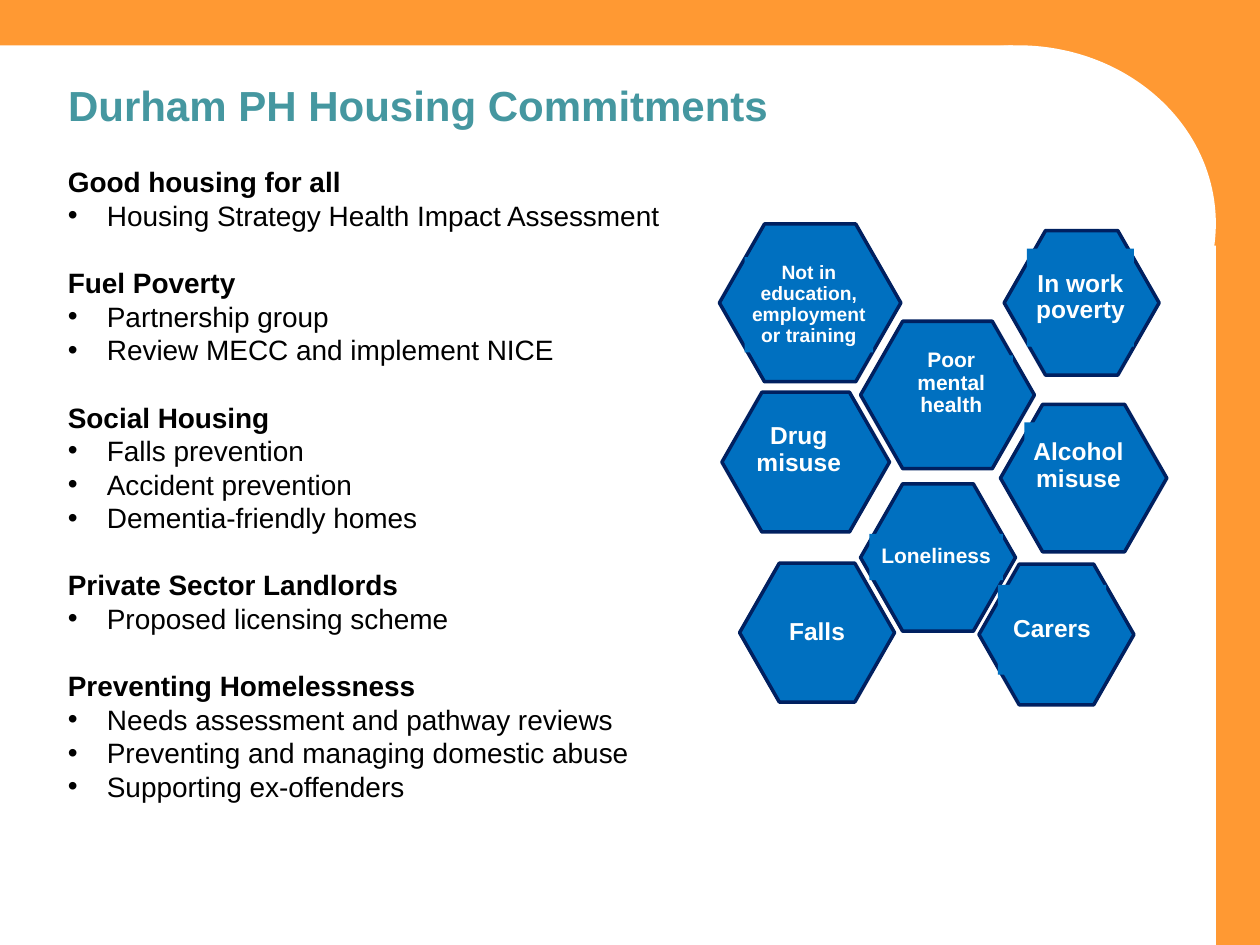
from dataclasses import dataclass
from lxml.etree import SubElement
from pptx import Presentation
from pptx.dml.color import RGBColor
from pptx.enum.shapes import MSO_SHAPE as Preset
from pptx.enum.text import MSO_ANCHOR as Anchor, PP_ALIGN as Align
from pptx.oxml.ns import qn
from pptx.util import Inches, Pt

TITLE = "Durham PH Housing Commitments"
COMMITMENTS = {
    "Good housing for all": ["Housing Strategy Health Impact Assessment"],
    "Fuel Poverty": ["Partnership group", "Review MECC and implement NICE"],
    "Social Housing": ["Falls prevention", "Accident prevention", "Dementia-friendly homes"],
    "Private Sector Landlords": ["Proposed licensing scheme"],
    "Preventing Homelessness": [
        "Needs assessment and pathway reviews",
        "Preventing and managing domestic abuse",
        "Supporting ex-offenders",
    ],
}
PANEL = [
    (Preset.RECTANGLE, (0, 4.8, 80.4, 95.2)),
    (Preset.RECTANGLE, (15.9, 26, 80.6, 74)),
    (Preset.OVAL, (65.1, 4.8, 31.4, 37.7)),
]
TITLE_AREA = (4.4, 7.7, 80, 8)
LIST_AREA = (4.4, 16.8, 63.9, 73)
ISSUES = [
    ("Falls", 14, (58.7, 59.6, 12.3, 14.7), (61, 62.3, 7.7, 9.2)),
    ("Loneliness", 12, (68.3, 51.2, 12.3, 15.6), (69, 56.5, 10.6, 4.9)),
    ("Carers", 14, (77.7, 59.7, 12.3, 14.9), (79.2, 61.9, 8.6, 9.5)),
    ("Alcohol misuse", 14, (79.4, 42.8, 13.2, 15.6), (81.3, 44.7, 8.6, 9.3)),
    ("In work poverty", 14, (79.7, 24.4, 12.3, 15.3), (81.5, 26.3, 8.5, 10.4)),
    ("Not in education, employment or training", 11, (57.1, 23.7, 14.4, 16.7), (59.1, 27.2, 10.2, 10.1)),
    ("Poor mental health", 12, (68.3, 34, 13.8, 15.6), (70.6, 37.6, 9.8, 5.9)),
    ("Drug misuse", 14, (57.3, 41.5, 13.3, 14.8), (59.5, 44.4, 7.8, 6.5)),
]


@dataclass(frozen=True)
class Theme:
    frame: RGBColor = RGBColor.from_string("FF9933")
    white: RGBColor = RGBColor.from_string("FFFFFF")
    black: RGBColor = RGBColor.from_string("000000")
    teal: RGBColor = RGBColor.from_string("4597A0")
    blue: RGBColor = RGBColor.from_string("0070C0")
    navy: RGBColor = RGBColor.from_string("002060")
    font: str = "Arial"
    title_size: int = 24
    body_size: int = 16
    body_pitch: float = 19.2
    indent: float = 0.31
    label_inset: float = 0.04


THEME = Theme()


def area(deck, percents):
    """Turn percentages of the slide into left, top, width and height."""
    sides = (deck.slide_width, deck.slide_height) * 2
    return [int(side * share / 100) for side, share in zip(sides, percents)]


def apply(target, formats):
    """Set every attribute named in a dict of format values."""
    for name, value in formats.items():
        setattr(target, name, value)


def style(paragraph, size, color, bold=True):
    """Format the text of one paragraph."""
    apply(paragraph.font, {"name": THEME.font, "size": Pt(size), "bold": bold})
    paragraph.font.color.rgb = color


def add_block(deck, slide, preset, percents, fill, line=None):
    """Add a flat filled shape, outlined if a line colour is given."""
    block = slide.shapes.add_shape(preset, *area(deck, percents))
    block.shadow.inherit = False
    block.fill.solid()
    block.fill.fore_color.rgb = fill
    if line is None:
        block.line.fill.background()
    else:
        block.line.color.rgb = line
        block.line.width = Pt(2)
    return block


def add_bullet(paragraph):
    """Give a paragraph a hanging bullet."""
    properties = paragraph._p.get_or_add_pPr()
    properties.set("marL", str(Inches(THEME.indent)))
    properties.set("indent", str(-Inches(THEME.indent)))
    SubElement(properties, qn("a:buFont")).set("typeface", THEME.font)
    SubElement(properties, qn("a:buChar")).set("char", "•")


def add_title(deck, slide):
    """Fill the title placeholder and bring it in front of the panel."""
    title = slide.shapes.title
    apply(title, dict(zip(("left", "top", "width", "height"), area(deck, TITLE_AREA))))
    title.text_frame.text = TITLE
    apply(title.text_frame, {"vertical_anchor": Anchor.TOP, "word_wrap": True})
    heading = title.text_frame.paragraphs[0]
    heading.alignment = Align.LEFT
    style(heading, THEME.title_size, THEME.teal)
    slide.shapes._spTree.append(title._element)


def add_commitments(deck, slide):
    """Write the headed bullet lists in one text box."""
    frame = slide.shapes.add_textbox(*area(deck, LIST_AREA)).text_frame
    frame.word_wrap = True
    lines = [(text, text == heading) for heading, items in COMMITMENTS.items()
             for text in (heading, *items)]
    for number, (text, is_heading) in enumerate(lines):
        paragraph = frame.add_paragraph() if number else frame.paragraphs[0]
        paragraph.text = text
        paragraph.line_spacing = Pt(THEME.body_pitch)
        if not is_heading:
            add_bullet(paragraph)
        elif number:
            paragraph.space_before = Pt(THEME.body_pitch)
        style(paragraph, THEME.body_size, THEME.black, is_heading)


def add_issue(deck, slide, name, size, cell, label_area):
    """Add one honeycomb cell and its label."""
    hexagon = add_block(deck, slide, Preset.HEXAGON, cell, THEME.blue, THEME.navy)
    hexagon.adjustments[0] = 0.286
    frame = add_block(deck, slide, Preset.RECTANGLE, label_area, THEME.blue).text_frame
    frame.text = name
    apply(frame, {"word_wrap": True, "vertical_anchor": Anchor.MIDDLE})
    for side in ("left", "top", "right", "bottom"):
        setattr(frame, f"margin_{side}", Inches(THEME.label_inset))
    label = frame.paragraphs[0]
    apply(label, {"alignment": Align.CENTER, "line_spacing": 0.9})
    style(label, size, THEME.white)


def main():
    """Build the housing commitments slide."""
    deck = Presentation()
    apply(deck, {"slide_width": Inches(10), "slide_height": Inches(7.5)})
    slide = deck.slides.add_slide(deck.slide_layouts[5])
    slide.background.fill.solid()
    slide.background.fill.fore_color.rgb = THEME.frame
    for preset, percents in PANEL:
        add_block(deck, slide, preset, percents, THEME.white)
    add_title(deck, slide)
    add_commitments(deck, slide)
    for issue in ISSUES:
        add_issue(deck, slide, *issue)
    deck.save("out.pptx")


if __name__ == "__main__":
    main()
